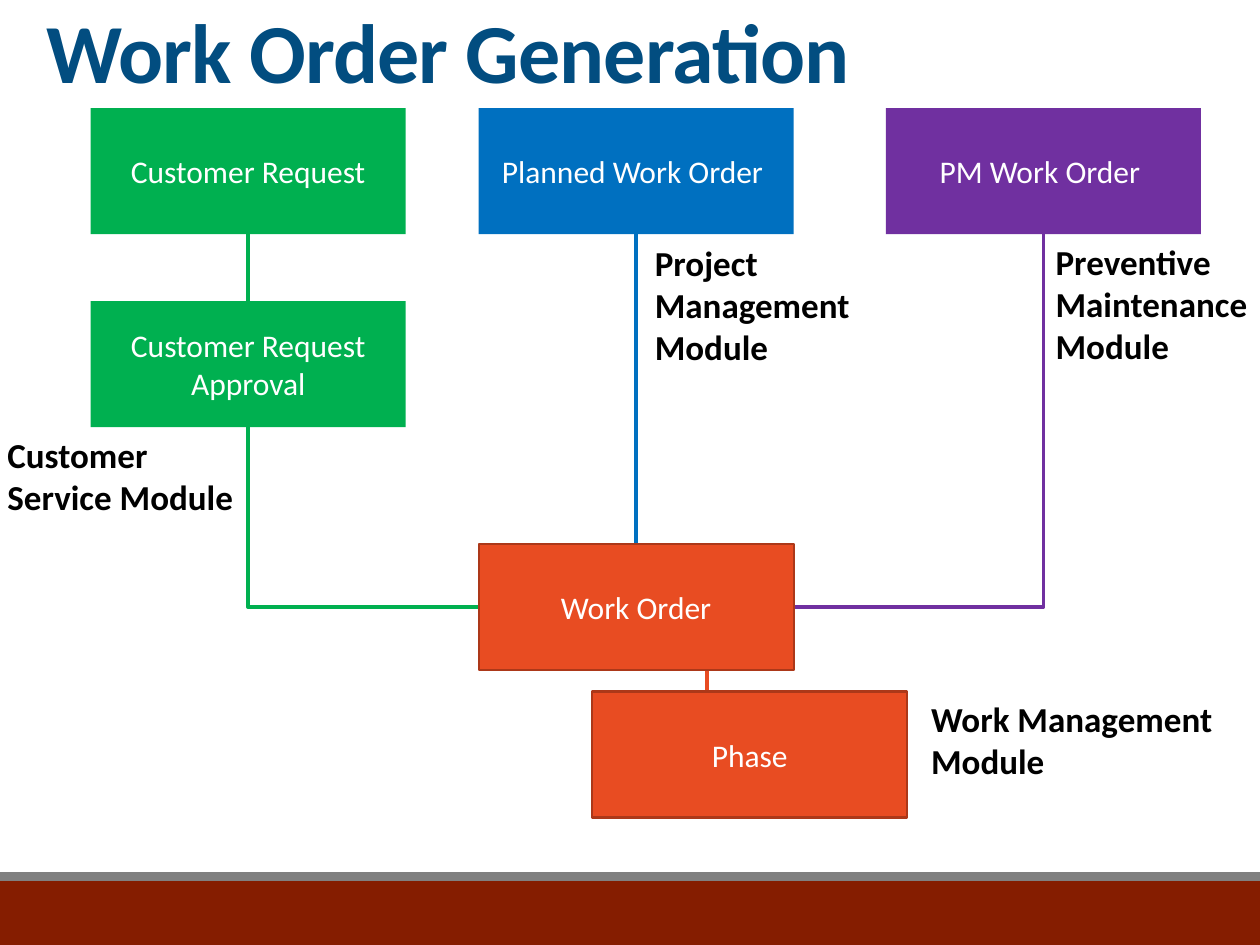
from lxml.etree import SubElement
from pptx import Presentation
from pptx.dml.color import RGBColor
from pptx.enum.shapes import MSO_CONNECTOR as Connector, MSO_SHAPE as Shape
from pptx.enum.text import MSO_ANCHOR as Anchor, PP_ALIGN as Align
from pptx.oxml.ns import qn
from pptx.util import Cm, Pt

FONT = "Calibri"
GREEN, BLUE, PURPLE, ORANGE = "00B050", "0070C0", "7030A0", "E84C22"
WHITE, BLACK, RUST = "FFFFFF", "000000", "AC3819"

# Diagram grid, in centimetres
BOX_W, BOX_H = 6.35, 2.54
REQUEST_X, ORDER_X, PM_X, PHASE_X = 1.83, 9.65, 17.86, 11.94
SOURCE_Y, APPROVAL_Y, ORDER_Y, PHASE_Y = 2.18, 6.07, 10.97, 13.94


def color(hex_value):
    return RGBColor.from_string(hex_value)


def add_run(paragraph, text, size, hex_value, bold=False):
    run = paragraph.add_run()
    run.text = text
    run.font.name, run.font.size, run.font.bold = FONT, Pt(size), bold
    run.font.color.rgb = color(hex_value)
    return run


def add_bar(slide, x, y, width, height, fill, outline=None):
    bar = slide.shapes.add_shape(Shape.RECTANGLE, Cm(x), Cm(y), Cm(width), Cm(height))
    bar.shadow.inherit = False
    bar.fill.solid()
    bar.fill.fore_color.rgb = color(fill)
    if outline:
        bar.line.color.rgb = color(outline)
        bar.line.width = Pt(1.25)
    else:
        bar.line.fill.background()
    return bar


def add_step(slide, text, x, y, fill, outline=None):
    frame = add_bar(slide, x, y, BOX_W, BOX_H, fill, outline).text_frame
    frame.word_wrap = True
    frame.vertical_anchor = Anchor.MIDDLE
    paragraph = frame.paragraphs[0]
    paragraph.alignment = Align.CENTER
    add_run(paragraph, text, 18, WHITE)


def add_link(slide, start, end, hex_value, bent=False):
    """Join two points; a bent link runs sideways first, then vertically."""
    kind = Connector.ELBOW if bent else Connector.STRAIGHT
    link = slide.shapes.add_connector(kind, *(Cm(v) for v in (*start, *end)))
    link.line.color.rgb = color(hex_value)
    link.line.width = Pt(2.25)
    properties = link._element.spPr
    if bent:
        properties.find(qn("a:prstGeom")).set("prst", "bentConnector2")
    SubElement(properties, qn("a:effectLst"))


def add_label(slide, text, x, y, width, height, size=20, hex_value=BLACK):
    frame = slide.shapes.add_textbox(Cm(x), Cm(y), Cm(width), Cm(height)).text_frame
    frame.word_wrap = True
    paragraph = frame.paragraphs[0]
    return paragraph, add_run(paragraph, text, size, hex_value, bold=True)


def main():
    deck = Presentation()
    deck.slide_width, deck.slide_height = Cm(25.4), Cm(19.05)
    slide = deck.slides.add_slide(deck.slide_layouts[6])

    # Footer bands
    add_bar(slide, 0, 17.75, 25.4, 1.3, "851D00")
    add_bar(slide, 0, 17.58, 25.4, 0.18, "808080")

    # Links, behind the steps
    request_mid, order_mid, pm_mid = (x + BOX_W / 2 for x in (REQUEST_X, ORDER_X, PM_X))
    source_bottom = SOURCE_Y + BOX_H
    order_middle = ORDER_Y + BOX_H / 2
    phase_link_x = 14.25
    add_link(slide, (order_mid, source_bottom), (order_mid, ORDER_Y), BLUE)
    add_link(slide, (request_mid, source_bottom), (request_mid, APPROVAL_Y), GREEN)
    add_link(slide, (ORDER_X, order_middle), (request_mid, APPROVAL_Y + BOX_H), GREEN, bent=True)
    add_link(slide, (ORDER_X + BOX_W, order_middle), (pm_mid, source_bottom), PURPLE, bent=True)
    add_link(slide, (phase_link_x, ORDER_Y + BOX_H), (phase_link_x, PHASE_Y), ORANGE)

    # Steps
    add_step(slide, "Customer Request", REQUEST_X, SOURCE_Y, GREEN)
    add_step(slide, "Customer Request Approval", REQUEST_X, APPROVAL_Y, GREEN)
    add_step(slide, "Planned Work Order ", ORDER_X, SOURCE_Y, BLUE)
    add_step(slide, "PM Work Order ", PM_X, SOURCE_Y, PURPLE)
    add_step(slide, "Work Order", ORDER_X, ORDER_Y, ORANGE, RUST)
    add_step(slide, "Phase", PHASE_X, PHASE_Y, ORANGE, RUST)

    # Title
    paragraph, title = add_label(slide, "Work Order Generation", 0.69, 0.18, 20.96, 4.04, 48, "024D80")
    paragraph.line_spacing = 0.85
    title.font._element.set("spc", "-50")

    # Module labels
    for text, x, y, width, height in (
        ("Customer Service Module", -0.1, 8.61, 5.31, 1.96),
        ("Project Management Module", 12.95, 4.75, 5.31, 2.82),
        ("Preventive Maintenance Module", 21.03, 4.72, 5.31, 2.82),
        ("Work Management Module", 18.52, 13.94, 6.65, 1.96),
    ):
        add_label(slide, text, x, y, width, height)

    deck.save("out.pptx")


if __name__ == "__main__":
    main()
